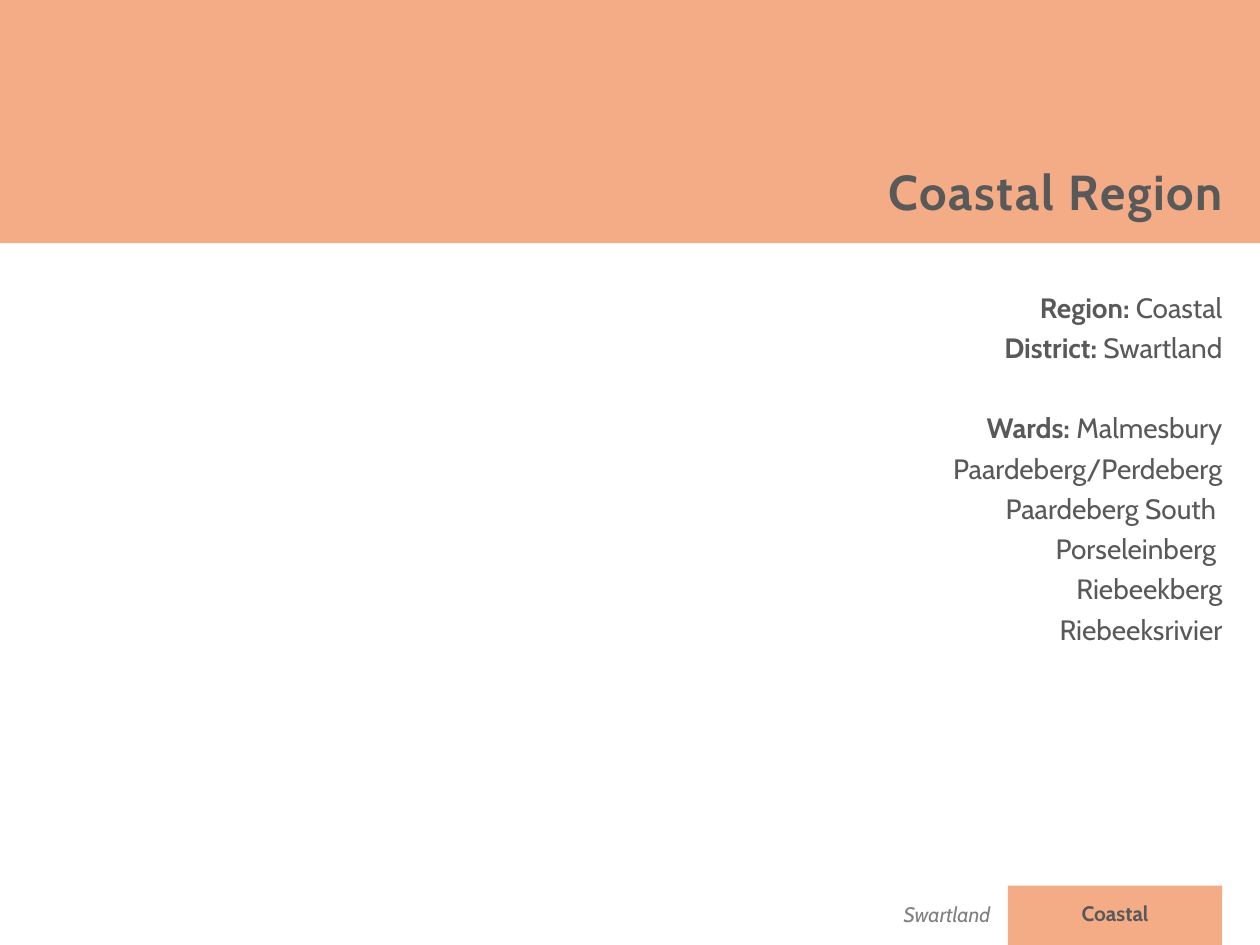
from pptx import Presentation
from pptx.dml.color import RGBColor
from pptx.enum.shapes import MSO_SHAPE
from pptx.enum.text import MSO_ANCHOR, MSO_AUTO_SIZE, PP_ALIGN
from pptx.util import Inches, Pt

RECT = MSO_SHAPE.RECTANGLE
TOP = MSO_ANCHOR.TOP
FIXED = MSO_AUTO_SIZE.NONE
RIGHT, CENTER = PP_ALIGN.RIGHT, PP_ALIGN.CENTER
PEACH = RGBColor(0xF3, 0xAC, 0x86)
DARK = RGBColor(0x59, 0x59, 0x59)
GRAY = RGBColor(0x80, 0x80, 0x80)
FONT = "Cabin"

TITLE = "Coastal Region"
REGION = "Coastal"
DISTRICT = "Swartland"
GROUPS = [
    [("Region: ", REGION), ("District: ", DISTRICT)],
    [
        ("Wards: ", "Malmesbury"),
        ("", "Paardeberg/Perdeberg"),
        ("", "Paardeberg South "),
        ("", "Porseleinberg "),
        ("", "Riebeekberg"),
        ("", "Riebeeksrivier"),
    ],
]
BAND = (0, 0, 10, 1.93)
HEAD = (6.89, 1.23, 2.92, 0.57)
BODY = (6.68, 2.2, 3.12, 3.33)
TAG = (8, 7.03, 1.7, 0.47)
LABEL = (8.47, 7.1, 0.76, 0.3)
NOTE = (6.3, 7.11, 1.66, 0.3)
GAP = Pt(23)


def add_bar(shapes, area):
    bar = shapes.add_shape(RECT, *map(Inches, area))
    bar.shadow.inherit = False
    bar.fill.solid()
    bar.fill.fore_color.rgb = PEACH
    bar.line.fill.background()


def add_run(para, text, size, color=DARK, bold=False, slant=False):
    run = para.add_run()
    run.text = text
    font = run.font
    font.name, font.size = FONT, Pt(size)
    font.bold, font.italic = bold, slant
    font.color.rgb = color
    return run


def add_box(shapes, area, wrap=True):
    box = shapes.add_textbox(*map(Inches, area))
    box.text_frame.word_wrap = wrap
    return box.text_frame


def add_list(frame):
    para = frame.paragraphs[0]
    for i, group in enumerate(GROUPS):
        for j, (label, name) in enumerate(group):
            if i or j:
                para = frame.add_paragraph()
            if i and not j:
                para.space_before = GAP
            para.alignment = RIGHT
            para.line_spacing = 1.2
            if label:
                add_run(para, label, 16, bold=True)
            add_run(para, name, 16)


def set_title(title):
    title.left, title.top, title.width, title.height = map(Inches, HEAD)
    frame = title.text_frame
    frame.word_wrap = False
    frame.auto_size = FIXED
    frame.vertical_anchor = TOP
    para = frame.paragraphs[0]
    para.alignment = RIGHT
    run = add_run(para, TITLE, 28, bold=True)
    run.font._element.set("spc", "100")
    title.element.getparent().append(title.element)


def main():
    deck = Presentation()
    deck.slide_width, deck.slide_height = Inches(10), Inches(7.5)
    slide = deck.slides.add_slide(deck.slide_layouts[5])
    shapes = slide.shapes

    add_bar(shapes, TAG)
    para = add_box(shapes, LABEL, wrap=False).paragraphs[0]
    para.alignment = CENTER
    add_run(para, REGION, 12, bold=True)
    para = add_box(shapes, NOTE).paragraphs[0]
    para.alignment = RIGHT
    add_run(para, DISTRICT, 12, GRAY, slant=True)

    add_list(add_box(shapes, BODY))
    add_bar(shapes, BAND)
    set_title(shapes.title)
    deck.save("out.pptx")


if __name__ == "__main__":
    main()
